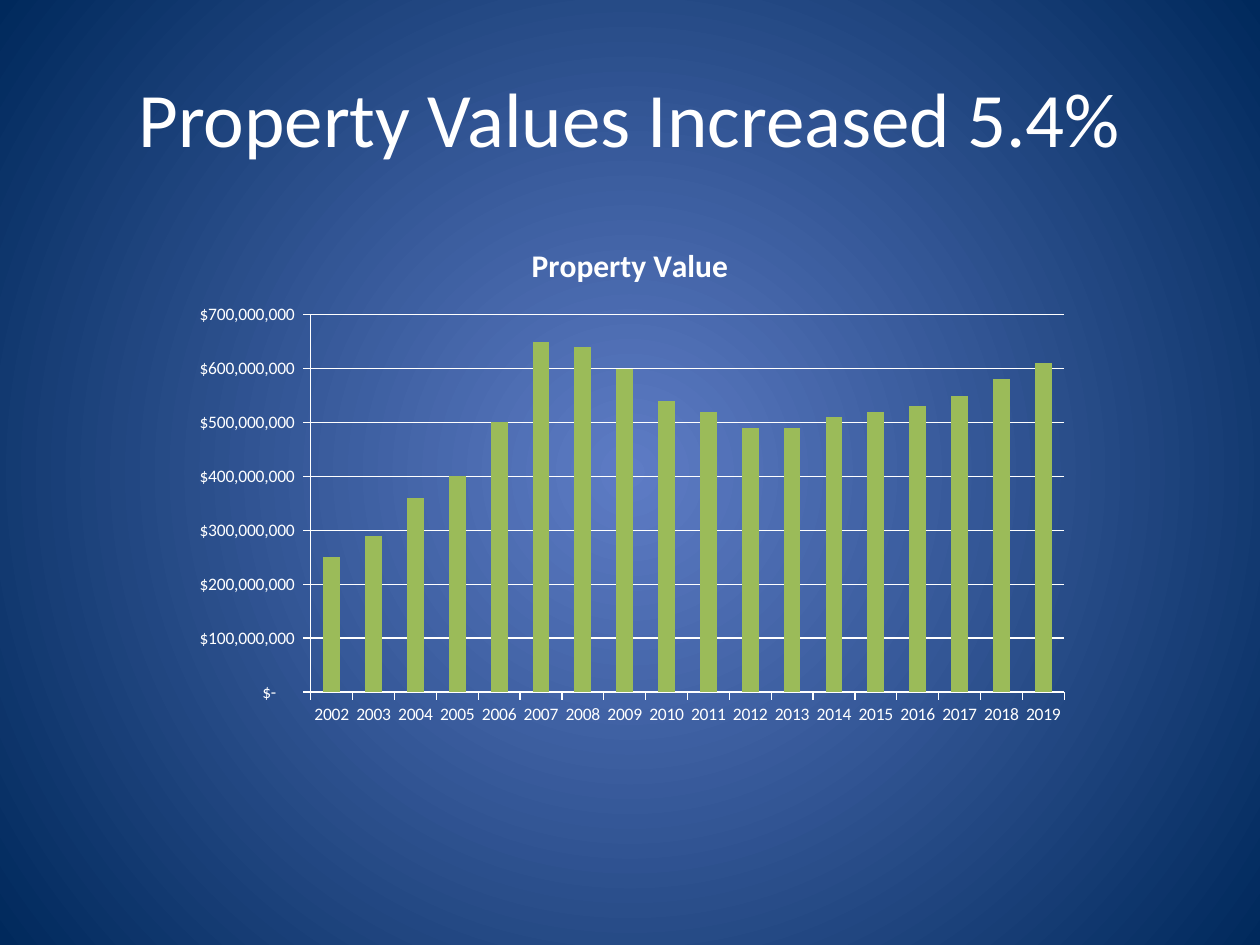
import pptx
import pptx.chart.data
import pptx.dml.color
import pptx.enum.chart
import pptx.enum.text
import pptx.oxml
import pptx.oxml.ns
import pptx.util
from pptx.util import Inches

COLORS = {"center": "5E7CC5", "edge": "00295C", "text": "FFFFFF", "bar": "9BBB59"}
FONT = "Calibri"
TITLE = "Property Values Increased 5.4%"
SERIES_NAME = "Property Value"
FIRST_YEAR = 2002
MILLIONS = [250, 290, 360, 400, 500, 650, 640, 600, 540,
            520, 490, 490, 510, 520, 530, 550, 580, 610]
DOLLARS = r'_("$"* #,##0_);_("$"* \(#,##0\);_("$"* "-"??_);_(@_)'


def rgb(name):
    return pptx.dml.color.RGBColor.from_string(COLORS[name])


def style_font(font, size, bold=False):
    font.name = FONT
    font.size = pptx.util.Pt(size)
    font.bold = bold
    font.color.rgb = rgb("text")


def place(shape, left, top, width, height):
    shape.left, shape.top = Inches(left), Inches(top)
    shape.width, shape.height = Inches(width), Inches(height)


def paint_background(slide):
    """Fill the slide with a circular gradient around its centre."""
    fill = slide.background.fill
    fill.gradient()
    for stop, name in zip(fill.gradient_stops, ("center", "edge")):
        stop.color.rgb = rgb(name)
    gradient = slide.element.find(".//" + pptx.oxml.ns.qn("a:gradFill"))
    linear = gradient.find(pptx.oxml.ns.qn("a:lin"))
    circle = pptx.oxml.parse_xml(
        f'<a:path {pptx.oxml.ns.nsdecls("a")} path="circle">'
        '<a:fillToRect l="50000" t="50000" r="50000" b="50000"/></a:path>')
    gradient.replace(linear, circle)


def add_title(slide):
    title = slide.shapes.title
    place(title, 0.5, 0.3, 9, 1.25)
    title.text_frame.vertical_anchor = pptx.enum.text.MSO_ANCHOR.MIDDLE
    paragraph = title.text_frame.paragraphs[0]
    paragraph.alignment = pptx.enum.text.PP_ALIGN.CENTER
    run = paragraph.add_run()
    run.text = TITLE
    style_font(run.font, 44)


def add_value_chart(slide):
    data = pptx.chart.data.CategoryChartData(number_format=DOLLARS)
    data.categories = [str(FIRST_YEAR + i) for i in range(len(MILLIONS))]
    data.add_series(SERIES_NAME, [value * 1_000_000 for value in MILLIONS])
    chart = slide.shapes.add_chart(
        pptx.enum.chart.XL_CHART_TYPE.COLUMN_CLUSTERED,
        Inches(1.41), Inches(1.75), Inches(7.18), Inches(4.08), data).chart
    style_font(chart.font, 10)
    chart.has_legend = False

    chart.has_title = True
    run = chart.chart_title.text_frame.paragraphs[0].add_run()
    run.text = SERIES_NAME
    style_font(run.font, 18, bold=True)
    chart.chart_title.include_in_layout = False

    plot = chart.plots[0]
    plot.gap_width = 150
    plot.vary_by_categories = False
    bars = plot.series[0].format.fill
    bars.solid()
    bars.fore_color.rgb = rgb("bar")

    value_axis = chart.value_axis
    value_axis.minimum_scale, value_axis.maximum_scale = 0, 700_000_000
    value_axis.major_unit = 100_000_000
    value_axis.tick_labels.number_format = DOLLARS
    value_axis.tick_labels.number_format_is_linked = False
    value_axis.has_major_gridlines = True
    for axis in (chart.category_axis, value_axis):
        axis.major_tick_mark = pptx.enum.chart.XL_TICK_MARK.OUTSIDE
    for part in (chart.category_axis, value_axis, value_axis.major_gridlines):
        part.format.line.color.rgb = rgb("text")
        part.format.line.width = pptx.util.Pt(0.75)


def main():
    presentation = pptx.Presentation()
    presentation.slide_width, presentation.slide_height = Inches(10), Inches(7.5)
    slide = presentation.slides.add_slide(presentation.slide_layouts[5])
    paint_background(slide)
    add_title(slide)
    add_value_chart(slide)
    presentation.save("out.pptx")


if __name__ == "__main__":
    main()
